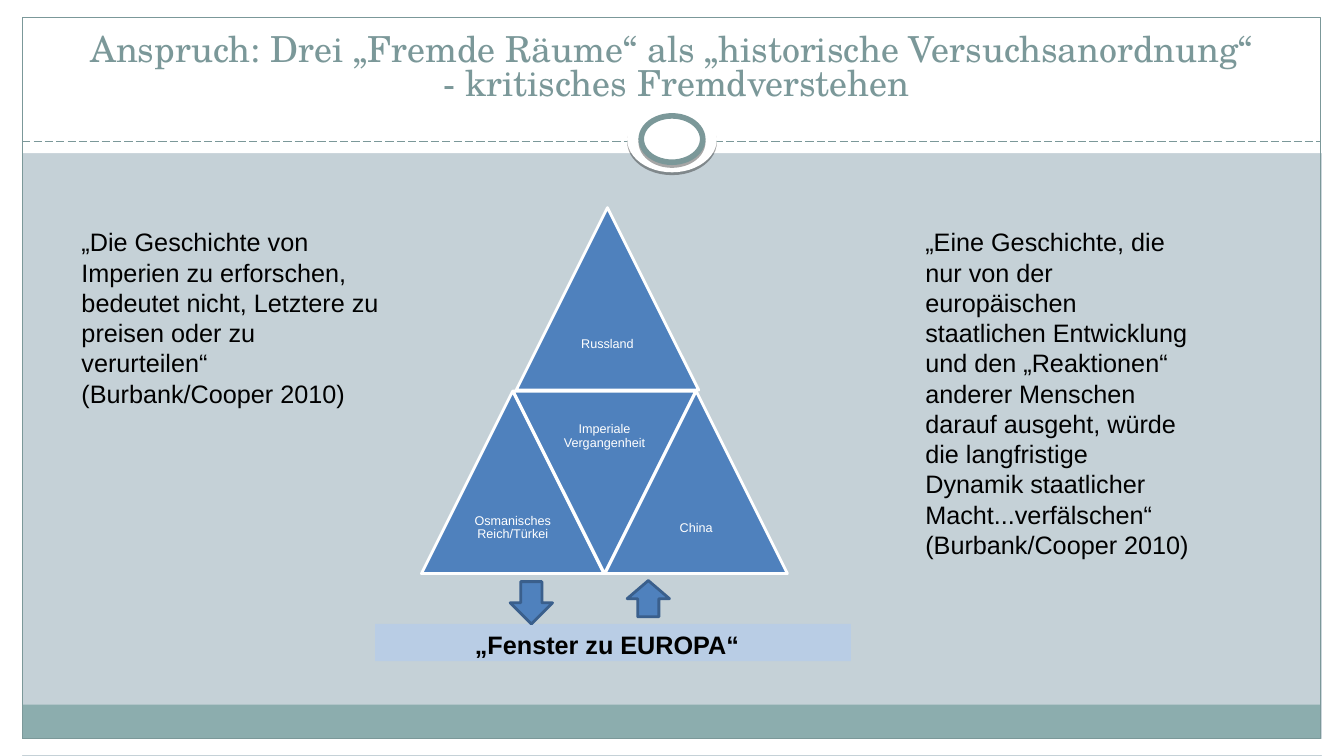
from dataclasses import dataclass
from typing import Optional

from lxml import etree
from pptx import Presentation
from pptx import util as u
from pptx.dml.color import RGBColor
from pptx.enum import dml, shapes, text
from pptx.oxml import ns

WHITE = RGBColor(0xFF, 0xFF, 0xFF)
BLACK = RGBColor(0x00, 0x00, 0x00)
MIST = RGBColor(0xC5, 0xD1, 0xD7)
TEAL = RGBColor(0x7B, 0x98, 0x99)
SAGE = RGBColor(0x8C, 0xAD, 0xAE)
BLUE = RGBColor(0x4F, 0x81, 0xBD)
NAVY = RGBColor(0x3A, 0x5F, 0x8C)
PALE = RGBColor(0xB9, 0xCD, 0xE5)

KIND = shapes.MSO_SHAPE
ALIGN = text.PP_ALIGN
ANCHOR = text.MSO_ANCHOR


@dataclass
class Box:
    left: float
    top: float
    width: float
    height: float

    def place(self) -> list:
        return [u.Inches(n) for n in (self.left, self.top, self.width, self.height)]


@dataclass
class Form:
    box: Box
    fill: Optional[RGBColor] = None
    line: Optional[RGBColor] = None
    weight: float = 0.75
    kind: shapes.MSO_SHAPE = KIND.RECTANGLE
    turn: float = 0
    shadow: bool = False


@dataclass
class Label:
    box: Box
    lines: list
    font: dict
    para: dict
    frame: dict


def assign(target, values: dict) -> None:
    for key, value in values.items():
        setattr(target, key, value)


def cast(shape) -> None:
    """Give the shape a soft shadow straight below it."""
    effects = shape._element.spPr.find(ns.qn("a:effectLst"))
    outer = etree.SubElement(effects, ns.qn("a:outerShdw"),
                             dist=str(u.Pt(2)), dir="5400000", rotWithShape="0")
    tint = etree.SubElement(outer, ns.qn("a:srgbClr"), val="000000")
    etree.SubElement(tint, ns.qn("a:alpha"), val="35000")


def draw(slide, form: Form):
    shape = slide.shapes.add_shape(form.kind, *form.box.place())
    shape.shadow.inherit = False
    shape.rotation = form.turn
    if form.fill is None:
        shape.fill.background()
    else:
        shape.fill.solid()
        shape.fill.fore_color.rgb = form.fill
    if form.line is None:
        shape.line.fill.background()
    else:
        shape.line.color.rgb = form.line
        shape.line.width = u.Pt(form.weight)
    if form.shadow:
        cast(shape)
    return shape


def write(slide, label: Label) -> None:
    frame = slide.shapes.add_textbox(*label.box.place()).text_frame
    assign(frame, {"word_wrap": True, **label.frame})
    para = frame.paragraphs[0]
    assign(para, label.para)
    for i, line in enumerate(label.lines):
        if i:
            para.add_line_break()
        run = para.add_run()
        run.text = line
        values = dict(label.font)
        run.font.color.rgb = values.pop("color")
        assign(run.font, values)


BODY = {"name": "Arial", "size": u.Pt(18), "color": BLACK}
SMALL = {"name": "Arial", "size": u.Pt(9), "color": WHITE}
HEAD = {"name": "TeX Gyre Schola", "size": u.Pt(25.6), "color": TEAL}
TIGHT = {f"margin_{side}": u.Inches(0.04) for side in ("left", "right", "top", "bottom")}

# Page frame: white margins, footer band, outline
MARGINS = [
    Form(Box(0, 7.33, 13.33, 0.16), WHITE),
    Form(Box(0, 0, 13.33, 1.52), WHITE),
    Form(Box(0, 0, 0.22, 7.5), WHITE),
    Form(Box(13.11, 0, 0.22, 7.5), WHITE),
    Form(Box(0.22, 6.99, 12.88, 0.34), SAGE),
    Form(Box(0.22, 0.17, 12.88, 7.16), line=TEAL),
]
RINGS = [
    Form(Box(6.22, 1.05, 0.89, 0.66), WHITE, kind=KIND.OVAL, shadow=True),
    Form(Box(6.36, 1.15, 0.61, 0.46), WHITE, TEAL, 4, KIND.OVAL, shadow=True),
]
ARROWS = [
    Form(Box(5.06, 5.77, 0.42, 0.42), BLUE, NAVY, 2, KIND.DOWN_ARROW),
    Form(Box(6.22, 5.76, 0.42, 0.36), BLUE, NAVY, 2, KIND.UP_ARROW),
]

# Title, quotes and the window caption
BANNER = Box(3.72, 6.19, 4.72, 0.37)
LABELS = [
    Label(Box(0.44, 0.25, 12.44, 0.83),
          ["Anspruch: Drei „Fremde Räume“ als „historische Versuchsanordnung“",
           " - kritisches Fremdverstehen"],
          HEAD, {"alignment": ALIGN.CENTER, "line_spacing": 0.8},
          {"vertical_anchor": ANCHOR.BOTTOM}),
    Label(Box(0.71, 2.2, 3.15, 1.76),
          ["„Die Geschichte von Imperien zu erforschen, bedeutet nicht, Letztere "
           "zu preisen oder zu verurteilen“ (Burbank/Cooper 2010)"], BODY, {}, {}),
    Label(Box(9.08, 2.2, 2.83, 3.14),
          ["„Eine Geschichte, die nur von der europäischen staatlichen Entwicklung "
           "und den „Reaktionen“ anderer Menschen darauf ausgeht, würde die "
           "langfristige Dynamik staatlicher Macht...verfälschen“ "
           "(Burbank/Cooper 2010)"], BODY, {}, {}),
    Label(BANNER, ["„Fenster zu EUROPA“"], {**BODY, "bold": True}, {},
          {"margin_left": u.Inches(0.99)}),
]

# Pyramid: left, top, rotation and name of each triangle
SIDE = 1.81
HALF = SIDE / 2
BASE = 4.18
ROW = 3.88
PARTS = [
    (5.12, 2.06, 0, "Russland"),
    (BASE, ROW, 0, "Osmanisches Reich/Türkei"),
    (BASE + 0.91, ROW, 180, "Imperiale Vergangenheit"),
    (BASE + 1.82, ROW, 0, "China"),
]


def stack(slide) -> None:
    for left, top, turn, name in PARTS:
        draw(slide, Form(Box(left, top, SIDE, SIDE), BLUE, WHITE, 2,
                         KIND.ISOSCELES_TRIANGLE, turn))
        drop = 0 if turn else HALF
        write(slide, Label(Box(left + HALF / 2, top + drop, HALF, HALF), [name], SMALL,
                           {"alignment": ALIGN.CENTER, "line_spacing": 0.9},
                           {"vertical_anchor": ANCHOR.MIDDLE, **TIGHT}))


def rule(slide) -> None:
    ends = [u.Inches(n) for n in (0.22, 1.4, 13.1, 1.4)]
    line = slide.shapes.add_connector(shapes.MSO_CONNECTOR.STRAIGHT, *ends)
    line.line.color.rgb = TEAL
    assign(line.line, {"width": u.Pt(0.75), "dash_style": dml.MSO_LINE.LONG_DASH})
    etree.SubElement(line._element.spPr, ns.qn("a:effectLst"))


def main() -> None:
    deck = Presentation()
    assign(deck, {"slide_width": u.Inches(13.33), "slide_height": u.Inches(7.5)})
    slide = deck.slides.add_slide(deck.slide_layouts[6])
    slide.background.fill.solid()
    slide.background.fill.fore_color.rgb = MIST

    for form in MARGINS:
        draw(slide, form)
    rule(slide)
    for form in [*RINGS, Form(BANNER, PALE)]:
        draw(slide, form)
    for label in LABELS:
        write(slide, label)
    stack(slide)
    for form in ARROWS:
        draw(slide, form)
    deck.save("out.pptx")


if __name__ == "__main__":
    main()
